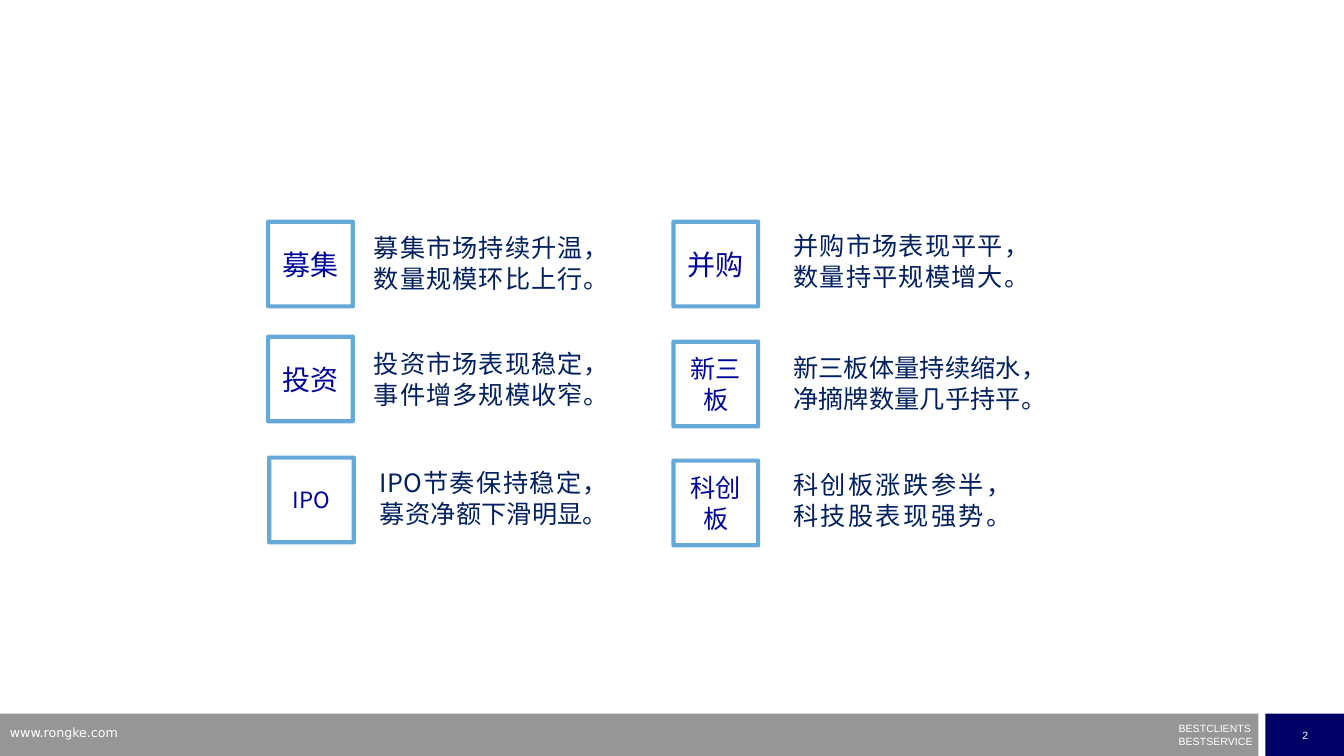
from dataclasses import dataclass

from lxml import etree
from pptx import Presentation
from pptx.dml.color import RGBColor
from pptx.enum import shapes, text
from pptx.oxml.ns import qn
from pptx.util import Emu, Pt

PX = 9144  # EMU per px, 100 px to the inch
COLORS = {"bar": "969696", "page": "000066", "white": "FFFFFF",
          "frame": "0070C0", "name": "000798", "body": "002060"}
NAME_FONT, BODY_FONT = "Noto Sans CJK JP", "Noto Sans CJK SC"
FRAME_SIDE, BODY_HEIGHT = 84, 71


@dataclass
class Topic:
    name: str
    name_size: int
    frame: tuple[int, int]
    body: tuple[int, int]
    body_width: int
    lines: list[str]


TOPICS = [
    Topic("募集", 20, (266, 220), (361, 226), 228, ["募集市场持续升温，", "数量规模环比上行。"]),
    Topic("投资", 20, (266, 334), (361, 341), 228, ["投资市场表现稳定，事件增多规模收窄。"]),
    Topic("IPO", 16, (267, 454), (367, 459), 221, ["IPO节奏保持稳定，", "募资净额下滑明显。"]),
    Topic("并购", 20, (668, 220), (777, 224), 229, ["并购市场表现平平，", "数量持平规模增大。"]),
    Topic("新三板", 18, (668, 339), (777, 345), 246, ["新三板体量持续缩水，", "净摘牌数量几乎持平。"]),
    Topic("科创板", 18, (668, 457), (777, 461), 211, ["科创板涨跌参半，", "科技股表现强势。"]),
]


def color(name: str) -> RGBColor:
    return RGBColor.from_string(COLORS[name])


def emu(*lengths: int) -> list[Emu]:
    return [Emu(n * PX) for n in lengths]


def write(tf, lines: list[str], *, size: float, font: str, fill: str,
          align=text.PP_ALIGN.LEFT, spacing: float | None = None, before: float = 0) -> None:
    """Fill a text frame, one paragraph per line."""
    for i, line in enumerate(lines):
        p = tf.add_paragraph() if i else tf.paragraphs[0]
        p.alignment = align
        if spacing:
            p.line_spacing = spacing
        if i and before:
            p.space_before = Pt(before)
        r = p.add_run()
        r.text = line
        r.font.size, r.font.name = Pt(size), font
        r.font.color.rgb = color(fill)
        etree.SubElement(r.font._element, qn("a:ea"), typeface=font)


def add_rect(s, left: int, top: int, width: int, height: int, fill: str | None = None):
    sp = s.shapes.add_shape(shapes.MSO_SHAPE.RECTANGLE, *emu(left, top, width, height))
    sp.shadow.inherit = False
    if fill:
        sp.fill.solid()
        sp.fill.fore_color.rgb = color(fill)
    else:
        sp.fill.background()
    sp.line.fill.background()
    sp.text_frame.vertical_anchor = text.MSO_ANCHOR.MIDDLE
    return sp


def add_text(s, left: int, top: int, width: int, height: int, *, grow: bool = False):
    tf = s.shapes.add_textbox(*emu(left, top, width, height)).text_frame
    tf.word_wrap = True
    if grow:
        tf.auto_size = text.MSO_AUTO_SIZE.SHAPE_TO_FIT_TEXT
    return tf


def add_footer(s) -> None:
    add_rect(s, 0, 708, 1248, 42, "bar")
    page = add_rect(s, 1255, 708, 79, 42, "page").text_frame
    page.word_wrap = False
    write(page, ["2"], size=7.5, font="Arial", fill="white", align=text.PP_ALIGN.CENTER)
    motto = add_text(s, 1169, 722, 76, 20, grow=True)
    motto.margin_left = motto.margin_top = motto.margin_right = motto.margin_bottom = 0
    write(motto, ["BESTCLIENTS", "BESTSERVICE"], size=7.5, font="Arial", fill="white",
          spacing=0.5, before=4.3)
    write(add_text(s, 0, 714, 320, 26), ["www.rongke.com"],
          size=9, font="DejaVu Sans", fill="white")


def add_topic(s, topic: Topic) -> None:
    """Draw the framed name and its justified summary."""
    sp = add_rect(s, *topic.frame, FRAME_SIDE, FRAME_SIDE)
    sp.line.color.rgb = color("frame")
    sp.line.width = Pt(3)
    rgb = sp.line._ln.find(".//" + qn("a:srgbClr"))
    etree.SubElement(rgb, qn("a:alpha"), val="60000")
    write(sp.text_frame, [topic.name], size=topic.name_size, font=NAME_FONT, fill="name",
          align=text.PP_ALIGN.CENTER)
    write(add_text(s, *topic.body, topic.body_width, BODY_HEIGHT, grow=True), topic.lines,
          size=18, font=BODY_FONT, fill="body", align=text.PP_ALIGN.JUSTIFY)


def main() -> None:
    prs = Presentation()
    prs.slide_width, prs.slide_height = emu(1333, 750)
    s = prs.slides.add_slide(prs.slide_layouts[6])
    add_footer(s)
    for topic in TOPICS:
        add_topic(s, topic)
    prs.save("out.pptx")


if __name__ == "__main__":
    main()
